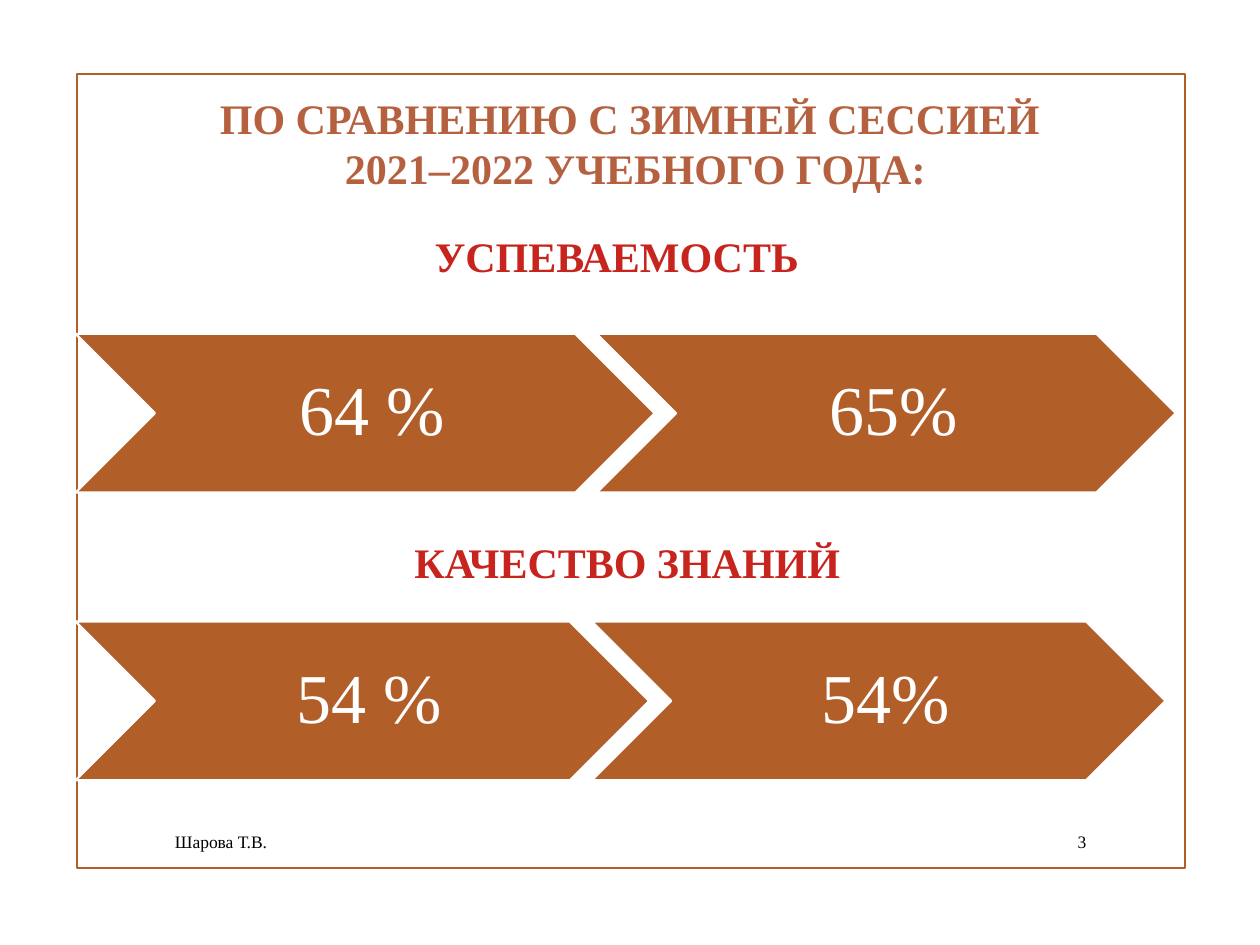
from pptx import Presentation
from pptx.dml.color import RGBColor
from pptx.enum.shapes import MSO_SHAPE
from pptx.enum.text import MSO_ANCHOR, PP_ALIGN
from pptx.util import Pt

FONT = "Times New Roman"
COLORS = {
    "brown": "B15E28",
    "title": "B5603F",
    "red": "C7241E",
    "white": "FFFFFF",
    "black": "000000",
}
TITLE_LINES = ["ПО СРАВНЕНИЮ С ЗИМНЕЙ СЕССИЕЙ ", "2021–2022 УЧЕБНОГО ГОДА:"]


def rgb(name):
    return RGBColor.from_string(COLORS[name])


def format_paragraph(paragraph, size, color, bold=False, align=PP_ALIGN.LEFT):
    paragraph.alignment = align
    font = paragraph.font
    font.name, font.size, font.bold = FONT, Pt(size), bold
    font.color.rgb = rgb(color)


def add_frame(slide):
    frame = slide.shapes.add_shape(
        MSO_SHAPE.RECTANGLE, Pt(44), Pt(42.5), Pt(633), Pt(453.5))
    frame.shadow.inherit = False
    frame.fill.background()
    frame.line.color.rgb = rgb("brown")
    frame.line.width = Pt(1.25)


def set_title(slide):
    title = slide.shapes.title
    title.left, title.top, title.width, title.height = (
        Pt(54), Pt(49), Pt(618), Pt(65.5))
    text_frame = title.text_frame
    text_frame.vertical_anchor = MSO_ANCHOR.TOP
    text_frame.word_wrap = True
    text_frame.text = "\n".join(TITLE_LINES)
    for paragraph in text_frame.paragraphs:
        paragraph.space_before = Pt(0)
        paragraph.line_spacing = 1.0
        format_paragraph(paragraph, 24, "title", True, PP_ALIGN.CENTER)


def add_heading(slide, text, left, top, width):
    heading = slide.shapes.add_textbox(Pt(left), Pt(top), Pt(width), Pt(36))
    heading.text_frame.word_wrap = False
    heading.text_frame.text = text
    format_paragraph(heading.text_frame.paragraphs[0], 24, "red", True)


def add_chevron_row(slide, values, top, width):
    """Place chevrons side by side, each overlapping the last by a tenth."""
    for index, value in enumerate(values):
        chevron = slide.shapes.add_shape(
            MSO_SHAPE.CHEVRON, Pt(43.2 + index * 0.9 * width), Pt(top),
            Pt(width), Pt(90.7))
        chevron.shadow.inherit = False
        chevron.fill.solid()
        chevron.fill.fore_color.rgb = rgb("brown")
        chevron.line.color.rgb = rgb("white")
        chevron.line.width = Pt(1.25)
        text_frame = chevron.text_frame
        text_frame.margin_left = Pt(12)
        text_frame.margin_right = Pt(4)
        text_frame.margin_top = text_frame.margin_bottom = Pt(4)
        text_frame.vertical_anchor = MSO_ANCHOR.MIDDLE
        text_frame.text = value
        paragraph = text_frame.paragraphs[0]
        paragraph.line_spacing = 0.9
        format_paragraph(paragraph, 40, "white", align=PP_ALIGN.CENTER)


def add_footer(slide, text, left, width, align):
    footer = slide.shapes.add_textbox(Pt(left), Pt(469.5), Pt(width), Pt(22.3))
    footer.text_frame.word_wrap = True
    footer.text_frame.vertical_anchor = MSO_ANCHOR.MIDDLE
    footer.text_frame.text = text
    format_paragraph(footer.text_frame.paragraphs[0], 10, "black", align=align)


def main():
    presentation = Presentation()
    presentation.slide_width, presentation.slide_height = Pt(720), Pt(540)
    slide = presentation.slides.add_slide(presentation.slide_layouts[5])
    add_frame(slide)
    set_title(slide)
    add_heading(slide, "УСПЕВАЕМОСТЬ", 241.2, 128.2, 231)
    add_chevron_row(slide, ["64 %", "65%"], 190.8, 330.9)
    add_heading(slide, "КАЧЕСТВО ЗНАНИЙ", 229.7, 303.1, 260)
    add_chevron_row(slide, ["54 %", "54%"], 355.2, 327.8)
    add_footer(slide, "Шарова Т.В.", 92.9, 401.8, PP_ALIGN.LEFT)
    add_footer(slide, "3", 596.9, 31, PP_ALIGN.RIGHT)
    presentation.save("out.pptx")


if __name__ == "__main__":
    main()
